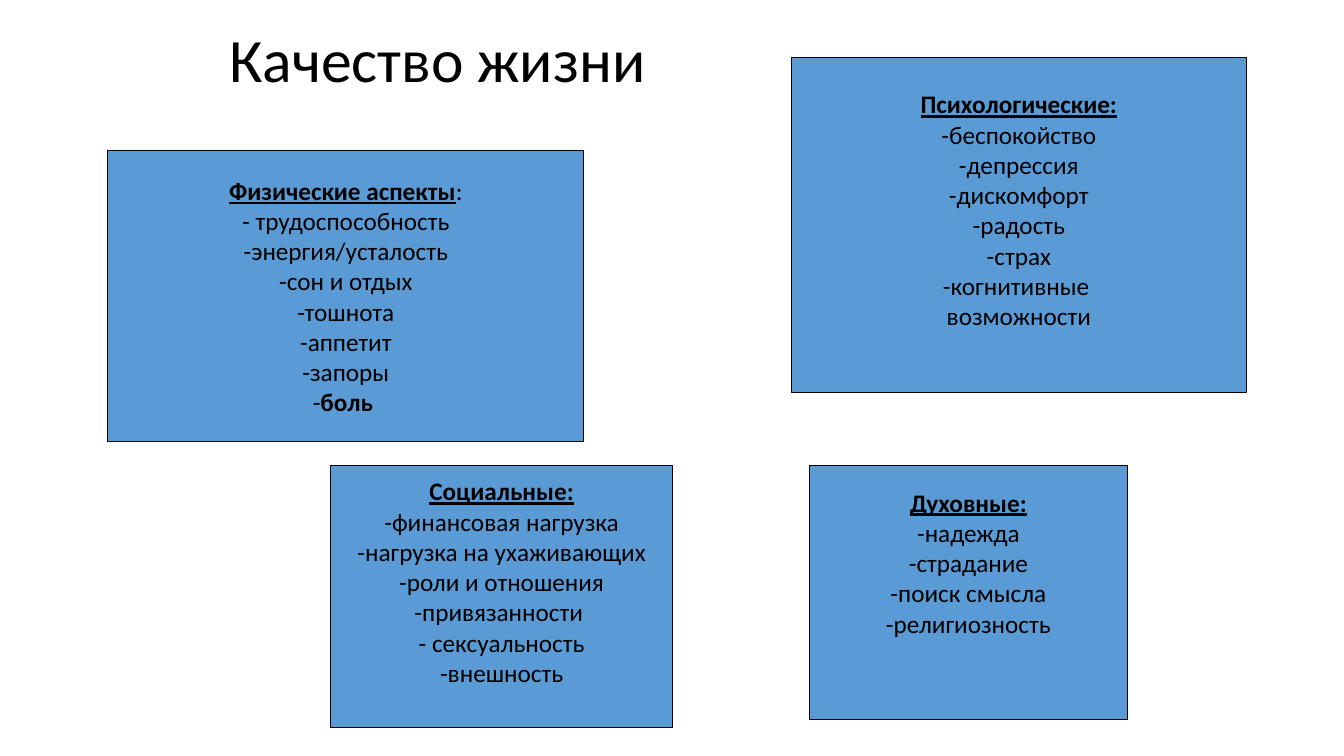
from pptx import Presentation
from pptx.dml.color import RGBColor
from pptx.enum.shapes import MSO_SHAPE
from pptx.enum.text import MSO_ANCHOR, PP_ALIGN
from pptx.util import Inches, Pt

TITLE = "Качество жизни"
BLACK, BLUE = "000000", "5B9BD5"
FONT = "Calibri"
LINE_HEIGHT = 0.3

# Box (left, top, width, height), free lines at the bottom,
# and lines of (text, style) runs: "h" heading, "b" bold, "" plain
ASPECTS = [
    ((1.07, 1.49, 4.72, 2.89), 0, [
        [("Физические аспекты", "h"), (":", "")],
        [("- трудоспособность", "")],
        [("-энергия/усталость", "")],
        [("-сон и отдых", "")],
        [("-тошнота", "")],
        [("-аппетит", "")],
        [("-запоры", "")],
        [("-", ""), ("боль ", "b")],
    ]),
    ((7.85, 0.57, 4.51, 3.32), 1, [
        [("Психологические:", "h")],
        [("-беспокойство", "")],
        [("-депрессия", "")],
        [("-дискомфорт", "")],
        [("-радость", "")],
        [("-страх", "")],
        [("-когнитивные ", "")],
        [("возможности", "")],
    ]),
    ((3.28, 4.62, 3.39, 2.6), 1, [
        [("Социальные:", "h")],
        [("-финансовая нагрузка", "")],
        [("-нагрузка на ухаживающих", "")],
        [("-роли и отношения", "")],
        [("-привязанности ", "")],
        [("- сексуальность", "")],
        [("-внешность", "")],
    ]),
    ((8.03, 4.62, 3.15, 2.52), 2, [
        [("Духовные:", "h")],
        [("-надежда", "")],
        [("-страдание", "")],
        [("-поиск смысла", "")],
        [("-религиозность", "")],
    ]),
]


def rgb(color):
    return RGBColor.from_string(color)


def set_font(p, size):
    p.font.name = FONT
    p.font.size = Pt(size)
    p.font.color.rgb = rgb(BLACK)


def add_title(s):
    tf = s.shapes.add_textbox(*map(Inches, (2.18, 0, 9, 1.25))).text_frame
    tf.word_wrap = True
    tf.vertical_anchor = MSO_ANCHOR.MIDDLE
    p = tf.paragraphs[0]
    p.text = TITLE
    p.line_spacing = 0.9
    set_font(p, 44)


def add_aspect(s, box, free_lines, lines):
    sp = s.shapes.add_shape(MSO_SHAPE.RECTANGLE, *map(Inches, box))
    sp.shadow.inherit = False
    sp.fill.solid()
    sp.fill.fore_color.rgb = rgb(BLUE)
    sp.line.color.rgb = rgb(BLACK)
    sp.line.width = Pt(0.75)
    tf = sp.text_frame
    tf.word_wrap = False
    tf.vertical_anchor = MSO_ANCHOR.MIDDLE
    tf.margin_bottom = Inches(0.05 + free_lines * LINE_HEIGHT)
    for i, runs in enumerate(lines):
        p = tf.add_paragraph() if i else tf.paragraphs[0]
        p.alignment = PP_ALIGN.CENTER
        set_font(p, 18)
        for text, style in runs:
            r = p.add_run()
            r.text = text
            if style:
                r.font.bold = True
                r.font.underline = style == "h"


prs = Presentation()
prs.slide_width, prs.slide_height = Inches(13.33), Inches(7.5)
s = prs.slides.add_slide(prs.slide_layouts[6])
add_title(s)
for aspect in ASPECTS:
    add_aspect(s, *aspect)
prs.save("out.pptx")
